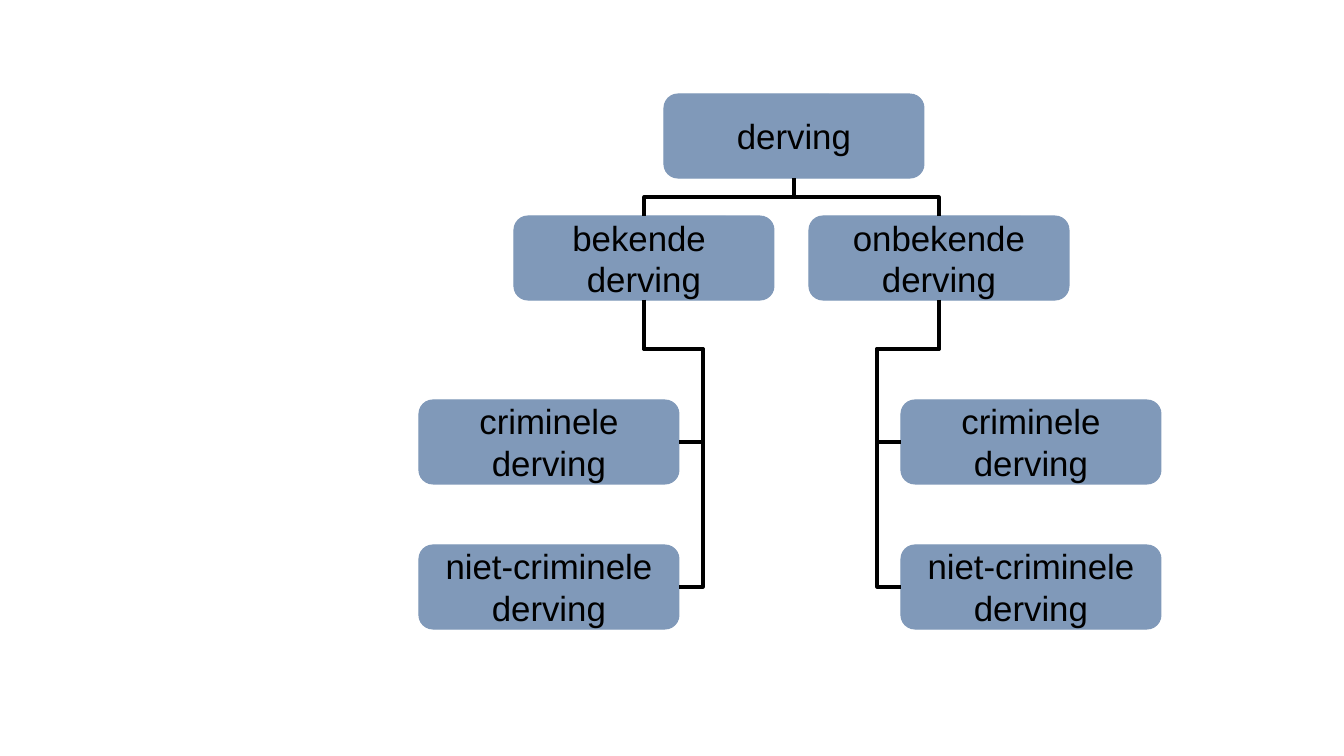
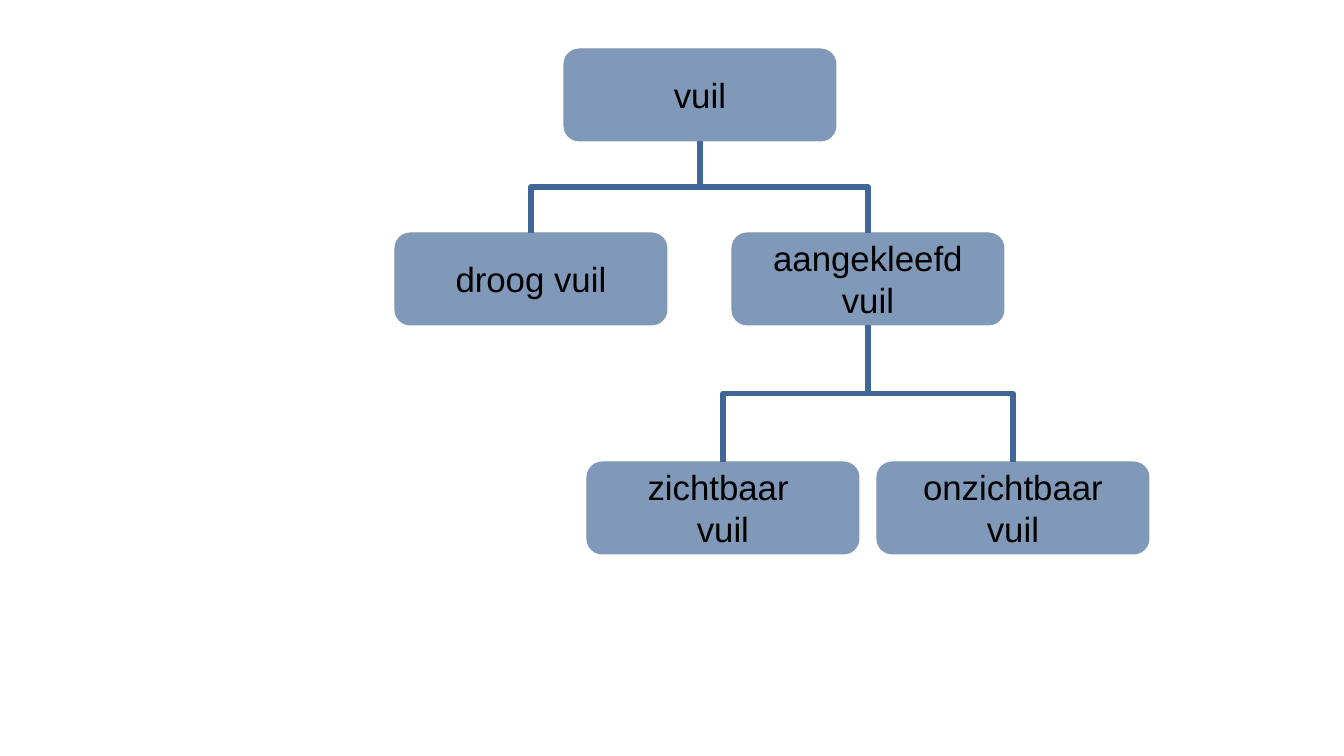
"""Build two tree diagrams: kinds of shrinkage and kinds of dirt."""
from lxml import etree
from pptx import Presentation
from pptx.dml.color import RGBColor
from pptx.enum import shapes, text as txt
from pptx.oxml import ns
from pptx.util import Emu, Pt

PX = 914400 / 100.8
BOX_BLUE = RGBColor(0x80, 0x99, 0xB9)
LINE_BLUE = RGBColor(0x40, 0x65, 0x97)
BLACK = RGBColor(0, 0, 0)
TOP, LEFT, BOTTOM, RIGHT = range(4)
DROP, OVERHANG = 49, 24

# Each node: key, text, centre x, top y. Each link: parent, child, child's side.
TREES = [
    dict(
        size=(260, 84), color=BLACK, weight=2.25,
        nodes=[
            ("root", "derving", 794, 94),
            ("unknown", "onbekende\nderving", 939, 216),
            ("known", "bekende \vderving", 644, 216),
            ("unknown crime", "criminele\vderving", 1031, 400),
            ("unknown other", "niet-criminele\vderving", 1031, 545),
            ("known other", "niet-criminele\vderving", 549, 545),
            ("known crime", "criminele\vderving", 549, 400),
        ],
        links=[
            ("root", "known", TOP),
            ("root", "unknown", TOP),
            ("unknown", "unknown crime", LEFT),
            ("known", "known crime", RIGHT),
            ("known", "known other", RIGHT),
            ("unknown", "unknown other", LEFT),
        ],
    ),
    dict(
        size=(272, 92), color=LINE_BLUE, weight=3.75,
        nodes=[
            ("dry", "droog vuil", 531, 233),
            ("stuck", "aangekleefd\vvuil", 868, 233),
            ("invisible", "onzichtbaar\nvuil", 1013, 462),
            ("visible", "zichtbaar \nvuil", 723, 462),
            ("root", "vuil", 700, 49),
        ],
        links=[
            ("root", "dry", TOP),
            ("root", "stuck", TOP),
            ("stuck", "visible", TOP),
            ("stuck", "invisible", TOP),
        ],
    ),
]


def px(n):
    return Emu(round(n * PX))


def write(shape, text, size=24.9, font="Arial", color=BLACK):
    tf = shape.text_frame
    tf.word_wrap = False
    tf.vertical_anchor = txt.MSO_ANCHOR.MIDDLE
    tf.text = text
    for p in tf.paragraphs:
        p.alignment = txt.PP_ALIGN.CENTER
        for r in p.runs:
            r.font.size, r.font.name = Pt(size), font
            r.font.color.rgb = color


def add_box(s, text, centre, top, size):
    w, h = size
    box = s.shapes.add_shape(
        shapes.MSO_SHAPE.FLOWCHART_ALTERNATE_PROCESS,
        px(centre - w / 2), px(top), px(w), px(h))
    box.shadow.inherit = False
    box.fill.solid()
    box.fill.fore_color.rgb = BOX_BLUE
    box.line.color.rgb = BOX_BLUE
    box.line.width = Pt(0.75)
    write(box, text)
    return box


def add_link(s, parent, child, side, color, weight):
    x1, y1 = parent.left + parent.width // 2, parent.top + parent.height
    x2 = child.left + {TOP: child.width // 2, LEFT: 0, RIGHT: child.width}[side]
    y2 = child.top + (0 if side == TOP else child.height // 2)
    across, down = abs(x2 - x1), y2 - y1
    line = s.shapes.add_connector(shapes.MSO_CONNECTOR.ELBOW, x1, y1, x2, y2)
    line.begin_connect(parent, BOTTOM)
    line.end_connect(child, side)
    line.left, line.top = (x1 + x2 - down) // 2, (y1 + y2 - across) // 2
    line.width, line.height = down, across
    line.line.color.rgb = color
    line.line.width = Pt(weight)

    props = line._element.spPr
    etree.SubElement(props, ns.qn("a:effectLst"))
    xfrm = props.find(ns.qn("a:xfrm"))
    for name in ("flipH", "flipV"):
        xfrm.attrib.pop(name, None)
    xfrm.set("rot", "5400000" if x2 < x1 else "16200000")
    if x2 > x1:
        xfrm.set("flipH", "1")

    bends = [0.5] if side == TOP else [px(DROP) / down, 1 + px(OVERHANG) / across]
    geom = props.find(ns.qn("a:prstGeom"))
    geom.set("prst", f"bentConnector{len(bends) + 2}")
    guides = geom.find(ns.qn("a:avLst"))
    for i, bend in enumerate(bends, 1):
        etree.SubElement(guides, ns.qn("a:gd"), name=f"adj{i}",
                         fmla=f"val {round(bend * 100000)}")


def main():
    prs = Presentation()
    prs.slide_width, prs.slide_height = px(1344), px(756)
    for tree in TREES:
        s = prs.slides.add_slide(prs.slide_layouts[6])
        boxes = {key: add_box(s, text, x, y, tree["size"])
                 for key, text, x, y in tree["nodes"]}
        for parent, child, side in tree["links"]:
            add_link(s, boxes[parent], boxes[child], side,
                     tree["color"], tree["weight"])
    prs.save("out.pptx")


if __name__ == "__main__":
    main()
